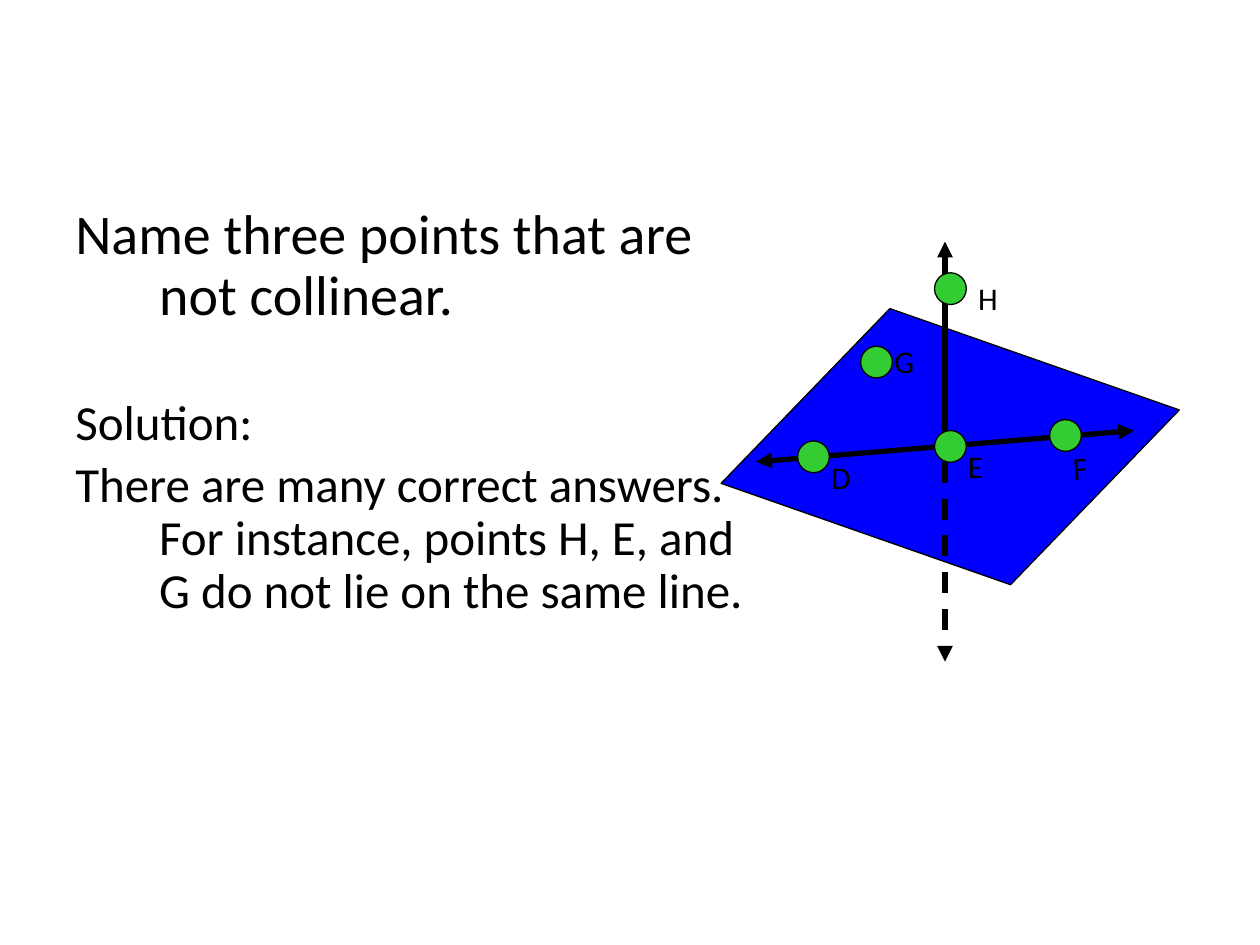
from lxml import etree
from pptx import Presentation
from pptx import util as u
from pptx.dml.color import RGBColor
from pptx.enum import dml, shapes
from pptx.oxml.ns import qn

FONT = "Calibri"
BLACK, BLUE, GREEN = "000000", "0000FF", "33CC33"

# text, size in pt, space before in pt
BODY = [
    ("Name three points that are not collinear.", 32, 0),
    ("Solution:", 28, 40.5),
    ("There are many correct answers. For instance, points H, E, and "
     "G do not lie on the same line.", 28, 5),
]
BODY_BOX = (1.27, 4.04, 13.97, 14.2)
HANGING = 1.69

PLANE_BOX = (15.04, 6.78, 8.23, 4.45)
PLANE_SLANT, PLANE_TURN = 0.46, 19.3

# start, end, arrowhead at the start too, dashed
LINES = [
    ((15.24, 9.31), (22.86, 8.68), True, False),
    ((19.05, 8.68), (19.05, 4.87), False, False),
    ((19.05, 9.31), (19.05, 13.34), False, True),
]

# name, centre of the dot, top left of the label, label rotation
POINTS = [
    ("G", (17.67, 7.3), (17.78, 6.77), 0),
    ("D", (16.4, 9.21), (16.51, 9.1), 0),
    ("E", (19.16, 9), (19.26, 8.89), 0),
    ("F", (21.48, 8.78), (21.38, 8.89), 355.6),
    ("H", (19.16, 5.82), (19.47, 5.5), 0),
]
DOT = 0.64
LABEL_SIZE = (1.48, 1.02)


def color(value):
    return RGBColor.from_string(value)


def cm(values):
    return [u.Cm(v) for v in values]


def add_filled(s, kind, box, fill):
    sp = s.shapes.add_shape(kind, *cm(box))
    sp.shadow.inherit = False
    sp.fill.solid()
    sp.fill.fore_color.rgb = color(fill)
    sp.line.color.rgb = color(BLACK)
    sp.line.width = u.Pt(0.75)
    return sp


def add_text_box(s, box):
    sp = s.shapes.add_textbox(*cm(box))
    sp.text_frame.word_wrap = True
    return sp


def add_run(p, content, size):
    r = p.add_run()
    r.text = content
    r.font.name = FONT
    r.font.size = u.Pt(size)
    r.font.color.rgb = color(BLACK)


def add_arrow(s, start, end, both_ends, dashed):
    c = s.shapes.add_connector(shapes.MSO_CONNECTOR.STRAIGHT, *cm(start + end))
    c.line.color.rgb = color(BLACK)
    c.line.width = u.Pt(3)
    if dashed:
        c.line.dash_style = dml.MSO_LINE.DASH
    ln = c.line._get_or_add_ln()
    for tag in ["a:headEnd", "a:tailEnd"] if both_ends else ["a:tailEnd"]:
        etree.SubElement(ln, qn(tag), type="triangle")
    etree.SubElement(c._element.spPr, qn("a:effectLst"))


def add_body(s):
    tf = add_text_box(s, BODY_BOX).text_frame
    for i, (content, size, before) in enumerate(BODY):
        p = tf.add_paragraph() if i else tf.paragraphs[0]
        p.line_spacing = 0.9
        p.space_before = u.Pt(before)
        pPr = p._p.get_or_add_pPr()
        pPr.set("marL", str(u.Cm(HANGING)))
        pPr.set("indent", str(-u.Cm(HANGING)))
        add_run(p, content, size)


def add_figure(s):
    plane = add_filled(s, shapes.MSO_SHAPE.PARALLELOGRAM, PLANE_BOX, BLUE)
    plane.adjustments[0] = PLANE_SLANT
    plane.rotation = PLANE_TURN
    for line in LINES:
        add_arrow(s, *line)
    for name, (x, y), corner, turn in POINTS:
        dot_box = (x - DOT / 2, y - DOT / 2, DOT, DOT)
        add_filled(s, shapes.MSO_SHAPE.OVAL, dot_box, GREEN)
        label = add_text_box(s, corner + LABEL_SIZE)
        label.rotation = turn
        add_run(label.text_frame.paragraphs[0], name, 18)


def main():
    prs = Presentation()
    prs.slide_width, prs.slide_height = cm((25.4, 19.05))
    s = prs.slides.add_slide(prs.slide_layouts[6])
    add_body(s)
    add_figure(s)
    prs.save("out.pptx")


if __name__ == "__main__":
    main()
